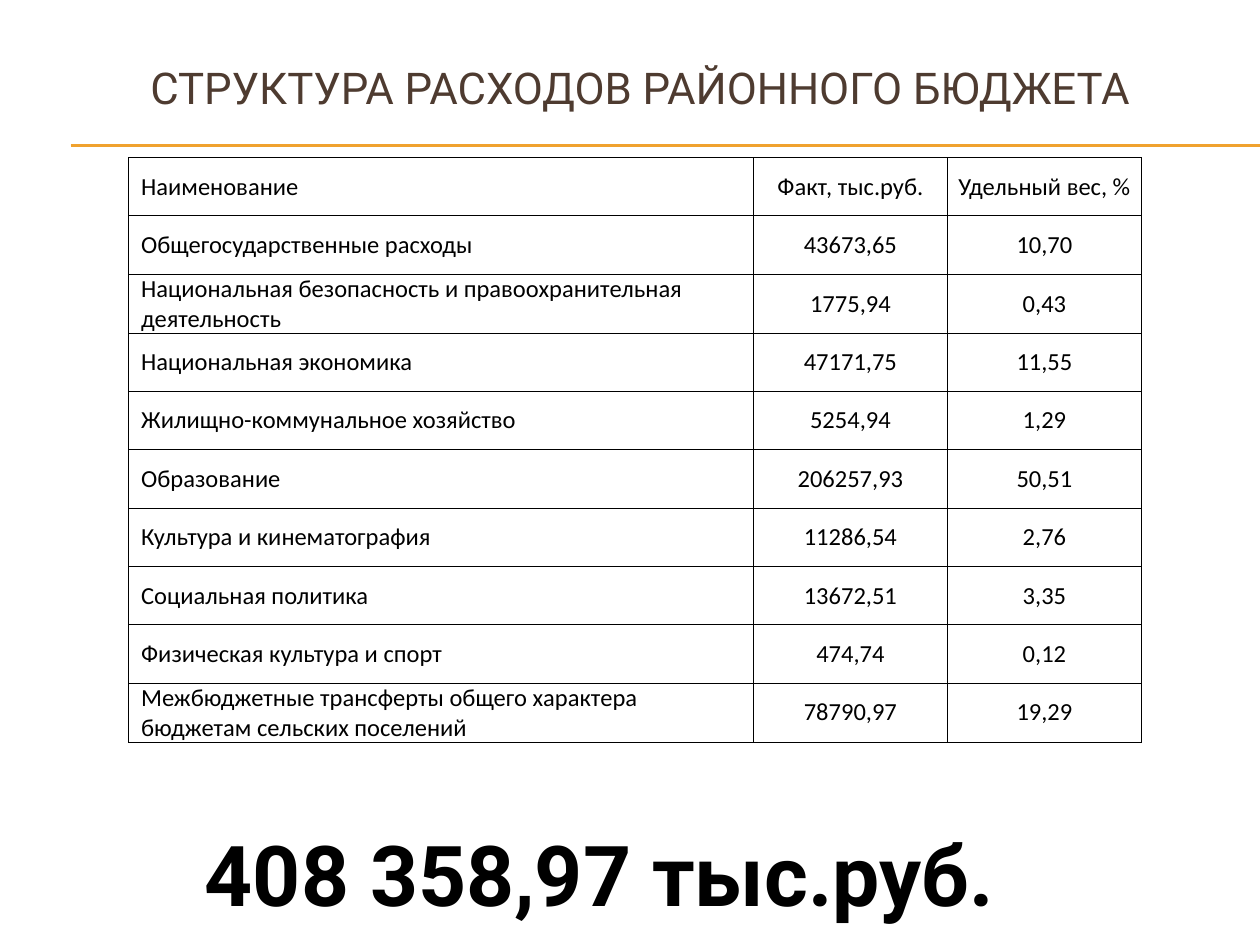
from lxml import etree
from pptx import Presentation, util as u
from pptx.dml.color import RGBColor
from pptx.enum import shapes, text
from pptx.oxml.ns import qn

TITLE = "СТРУКТУРА РАСХОДОВ РАЙОННОГО БЮДЖЕТА"
TOTAL = "408 358,97 тыс.руб."
ROWS = [
    ("Наименование", "Факт, тыс.руб.", "Удельный вес, %"),
    ("Общегосударственные расходы", "43673,65", "10,70"),
    ("Национальная безопасность и правоохранительная деятельность", "1775,94", "0,43"),
    ("Национальная экономика", "47171,75", "11,55"),
    ("Жилищно-коммунальное хозяйство", "5254,94", "1,29"),
    ("Образование", "206257,93", "50,51"),
    ("Культура и кинематография", "11286,54", "2,76"),
    ("Социальная политика", "13672,51", "3,35"),
    ("Физическая культура и спорт", "474,74", "0,12"),
    ("Межбюджетные трансферты общего характера бюджетам сельских поселений",
     "78790,97", "19,29"),
]

THEME = {
    "title": {"name": "Roboto", "size": u.Pt(25), "bold": False, "color": "4E3B30"},
    "cell": {"name": "Calibri", "size": u.Pt(14), "bold": False, "color": "000000"},
    "total": {"name": "Roboto", "size": u.Pt(48), "bold": True, "color": "000000"},
    "rule": {"color": "F0A22E", "width": u.Pt(0.75)},
    "border": {"color": "000000", "width": u.Pt(0.5)},
}

WIDTH, HEIGHT = 10, 7.5
TITLE_BOX = (0.33, 0.23, 9.5, 0.92)
TOTAL_BOX = (1.36, 6.48, 6.8, 0.78)
RULE_LEFT, RULE_TOPS = 0.56, (1.15, 1.16)
TABLE_LEFT, TABLE_TOP, TABLE_HEIGHT = 1.02, 1.25, 4.63
COLUMNS = (4.96, 1.54, 1.54)
NAME_INDENT = 0.1


def inches(*lengths):
    return [u.Inches(length) for length in lengths]


def write(frame, words, style, align):
    para = frame.paragraphs[0]
    para.alignment = align
    span = para.add_run()
    span.text = words
    for key, value in style.items():
        if key == "color":
            span.font.color.rgb = RGBColor.from_string(value)
        else:
            setattr(span.font, key, value)
    return para


def add_text(page, place, words, style, **frame_format):
    box = page.shapes.add_textbox(*inches(*place))
    for key, value in frame_format.items():
        setattr(box.text_frame, key, value)
    write(box.text_frame, words, style, text.PP_ALIGN.CENTER)


def add_rule(page, top):
    rule = page.shapes.add_connector(
        shapes.MSO_CONNECTOR.STRAIGHT, *inches(RULE_LEFT, top, WIDTH, top))
    rule.line.color.rgb = RGBColor.from_string(THEME["rule"]["color"])
    rule.line.width = THEME["rule"]["width"]
    etree.SubElement(rule._element.spPr, qn("a:effectLst"))


def add_borders(cell):
    properties = cell._tc.get_or_add_tcPr()
    for side in ("lnL", "lnR", "lnT", "lnB"):
        line = etree.SubElement(properties, qn(f"a:{side}"), w=str(THEME["border"]["width"]))
        fill = etree.SubElement(line, qn("a:solidFill"))
        etree.SubElement(fill, qn("a:srgbClr"), val=THEME["border"]["color"])


def fill_cell(cell, words, is_name):
    for side in ("left", "right", "top", "bottom"):
        setattr(cell, f"margin_{side}", 0)
    cell.vertical_anchor = text.MSO_ANCHOR.MIDDLE
    add_borders(cell)
    cell.fill.background()
    align = text.PP_ALIGN.LEFT if is_name else text.PP_ALIGN.CENTER
    para = write(cell.text_frame, words, THEME["cell"], align)
    if is_name:
        para._p.get_or_add_pPr().set("marL", str(u.Inches(NAME_INDENT)))


def add_budget_table(page):
    table = page.shapes.add_table(
        len(ROWS), len(COLUMNS),
        *inches(TABLE_LEFT, TABLE_TOP, sum(COLUMNS), TABLE_HEIGHT)).table
    table.first_row = table.horz_banding = False
    for column, width in zip(table.columns, COLUMNS):
        column.width = u.Inches(width)
    for r, row in enumerate(ROWS):
        for c, words in enumerate(row):
            fill_cell(table.cell(r, c), words, is_name=c == 0)


def main():
    deck = Presentation()
    deck.slide_width, deck.slide_height = inches(WIDTH, HEIGHT)
    page = deck.slides.add_slide(deck.slide_layouts[6])
    for top in RULE_TOPS:
        add_rule(page, top)
    add_text(page, TITLE_BOX, TITLE, THEME["title"],
             word_wrap=True, vertical_anchor=text.MSO_ANCHOR.MIDDLE)
    add_budget_table(page)
    add_text(page, TOTAL_BOX, TOTAL, THEME["total"], word_wrap=False)
    deck.save("out.pptx")


if __name__ == "__main__":
    main()
